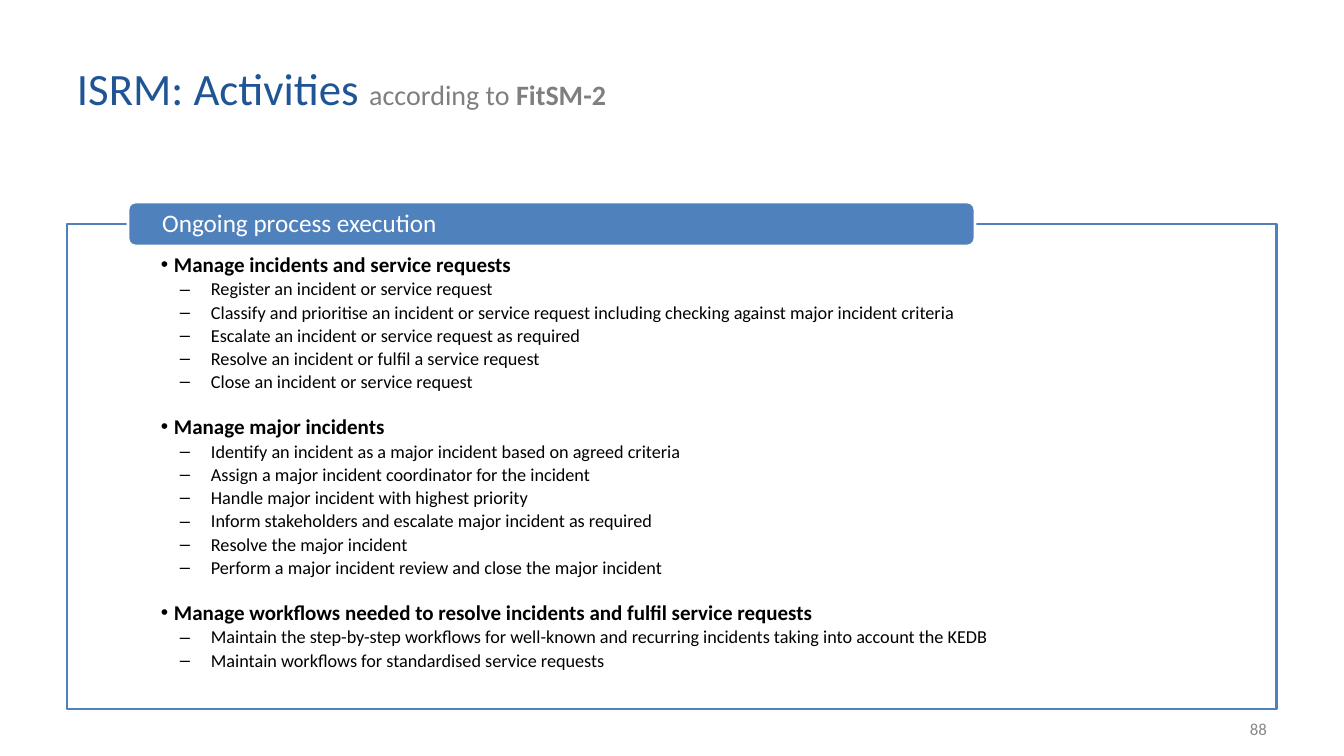
from dataclasses import dataclass
from lxml import etree
from pptx import Presentation
from pptx import util as u
from pptx.dml.color import RGBColor
from pptx.enum import shapes, text
from pptx.oxml.ns import qn

TITLE = ["ISRM: Activities ", "according to ", "FitSM-2"]
HEADER = "Ongoing process execution"
PAGE = "88"
ACTIVITIES = {
    "Manage incidents and service requests": [
        "Register an incident or service request",
        "Classify and prioritise an incident or service request including checking against major incident criteria",
        "Escalate an incident or service request as required",
        "Resolve an incident or fulfil a service request",
        "Close an incident or service request",
    ],
    "Manage major incidents": [
        "Identify an incident as a major incident based on agreed criteria",
        "Assign a major incident coordinator for the incident",
        "Handle major incident with highest priority",
        "Inform stakeholders and escalate major incident as required",
        "Resolve the major incident",
        "Perform a major incident review and close the major incident",
    ],
    "Manage workflows needed to resolve incidents and fulfil service requests": [
        "Maintain the step-by-step workflows for well-known and recurring incidents taking into account the KEDB",
        "Maintain workflows for standardised service requests",
    ],
}


@dataclass(frozen=True)
class Theme:
    font: str = "Calibri"
    title: str = "205595"
    muted: str = "7F7F7F"
    page: str = "888888"
    accent: str = "4F81BD"
    white: str = "FFFFFF"
    black: str = "000000"
    title_pt: int = 32
    subtitle_pt: int = 20
    header_pt: int = 18
    group_pt: int = 15
    item_pt: int = 13
    page_pt: int = 12


T = Theme()
SLIDE = (1344, 756)
TITLE_BOX = (67, 30, 998, 115)
FRAME = (67, 224, 1210, 485)
HEADER_BOX = (128, 202, 847, 44)
PAGE_BOX = (964, 709, 313, 40)


def px(n):
    return round(n * 914400 / 100.8)


def box(v):
    return [px(n) for n in v]


def add_text(p, words, size, color, bold=False):
    r = p.add_run()
    r.text = words
    f = r.font
    f.name, f.size, f.bold = T.font, u.Pt(size), bold
    f.color.rgb = RGBColor.from_string(color)


def set_frame(tf, anchor, left=10, top=5, right=10, bottom=5):
    tf.word_wrap = True
    tf.auto_size = text.MSO_AUTO_SIZE.NONE
    tf.vertical_anchor = anchor
    tf.margin_left, tf.margin_top, tf.margin_right, tf.margin_bottom = box((left, top, right, bottom))


def add_box(s, kind, place, fill, line):
    sp = s.shapes.add_shape(kind, *box(place))
    sp.shadow.inherit = False
    sp.fill.solid()
    sp.fill.fore_color.rgb = RGBColor.from_string(fill)
    sp.line.color.rgb = RGBColor.from_string(line)
    sp.line.width = u.Pt(2)
    return sp


def add_bullet(p, mark, level, left, hang, before):
    p.level = level
    p.alignment = text.PP_ALIGN.LEFT
    p.line_spacing = 0.9
    p.space_before = u.Pt(before)
    pPr = p._p.get_or_add_pPr()
    pPr.set("marL", str(px(left)))
    pPr.set("indent", str(-px(hang)))
    etree.SubElement(pPr, qn("a:buFont"), typeface="Arial")
    etree.SubElement(pPr, qn("a:buChar"), char=mark)


def add_activities(tf):
    p = tf.paragraphs[0]
    for i, (group, items) in enumerate(ACTIVITIES.items()):
        if i:
            p = tf.add_paragraph()
        add_bullet(p, "•", 1, 13, 13, 17 if i else 0)
        add_text(p, group, T.group_pt, T.black, bold=True)
        for item in items:
            p = tf.add_paragraph()
            add_bullet(p, "–", 2, 50, 31, 2.5)
            add_text(p, item, T.item_pt, T.black)


def main():
    prs = Presentation()
    prs.slide_width, prs.slide_height = box(SLIDE)
    s = prs.slides.add_slide(prs.slide_layouts[5])
    middle = text.MSO_ANCHOR.MIDDLE

    title = s.shapes.title
    title.left, title.top, title.width, title.height = box(TITLE_BOX)
    set_frame(title.text_frame, middle)
    p = title.text_frame.paragraphs[0]
    p.alignment = text.PP_ALIGN.LEFT
    name, joiner, standard = TITLE
    add_text(p, name, T.title_pt, T.title)
    add_text(p, joiner, T.subtitle_pt, T.muted)
    add_text(p, standard, T.subtitle_pt, T.muted, bold=True)

    frame = add_box(s, shapes.MSO_SHAPE.RECTANGLE, FRAME, T.white, T.accent)
    color = frame.fill._xPr.find(".//" + qn("a:srgbClr"))
    etree.SubElement(color, qn("a:alpha"), val="90000")
    set_frame(frame.text_frame, text.MSO_ANCHOR.TOP, left=94, top=30, right=94, bottom=10)
    add_activities(frame.text_frame)

    header = add_box(s, shapes.MSO_SHAPE.ROUNDED_RECTANGLE, HEADER_BOX, T.accent, T.white)
    header.adjustments[0] = 0.17
    set_frame(header.text_frame, middle, left=32, top=0, right=32, bottom=0)
    p = header.text_frame.paragraphs[0]
    p.alignment = text.PP_ALIGN.LEFT
    p.line_spacing = 0.9
    add_text(p, HEADER, T.header_pt, T.white)

    page = s.shapes.add_textbox(*box(PAGE_BOX))
    set_frame(page.text_frame, middle)
    p = page.text_frame.paragraphs[0]
    p.alignment = text.PP_ALIGN.RIGHT
    add_text(p, PAGE, T.page_pt, T.page)

    prs.save("out.pptx")


if __name__ == "__main__":
    main()
